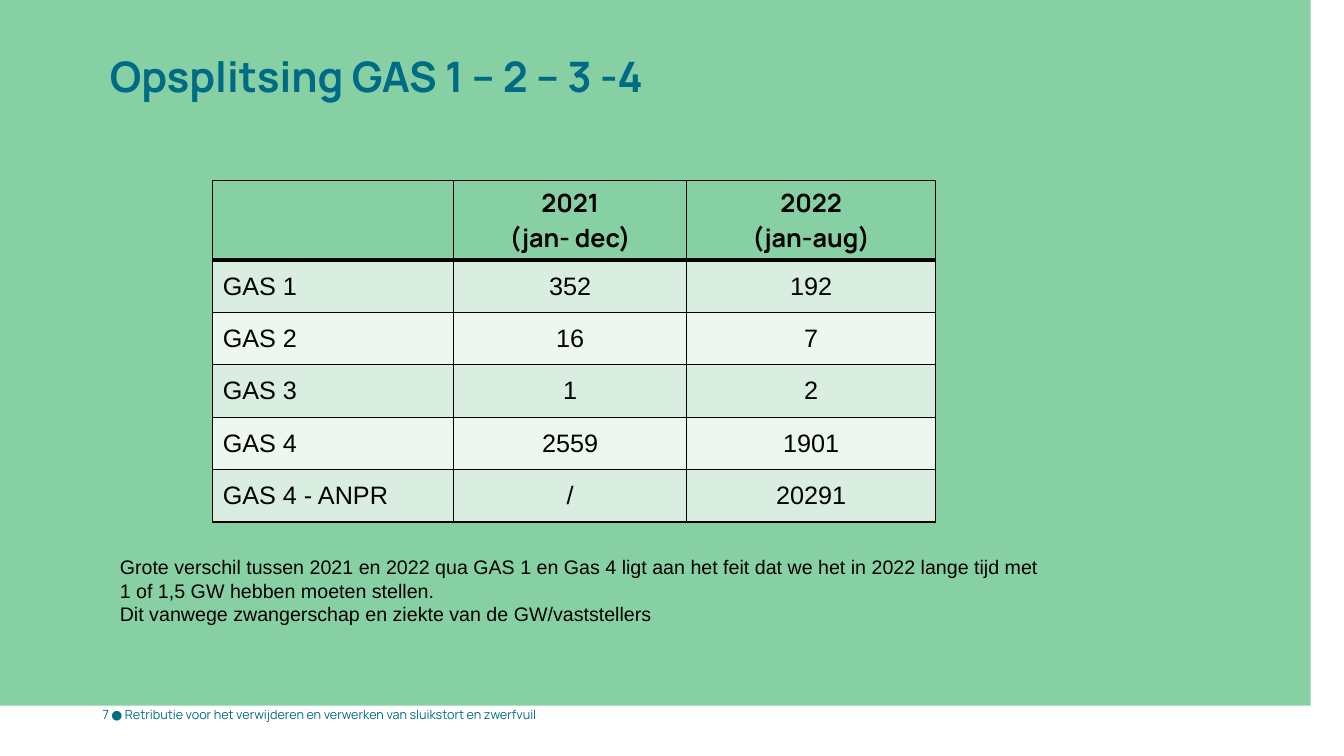
from math import cos, pi, sin

from lxml import etree
from pptx import Presentation
from pptx.dml.color import RGBColor
from pptx.enum.text import MSO_ANCHOR, PP_ALIGN
from pptx.oxml.ns import qn
from pptx.util import Inches, Pt

TOP, MIDDLE = MSO_ANCHOR.TOP, MSO_ANCHOR.MIDDLE
LEFT, CENTER = PP_ALIGN.LEFT, PP_ALIGN.CENTER
GREEN, TEAL, BLACK = "87D0A4", "006B84", "000000"
BANDS = ("D9EEE0", "EDF7F0")
HEADING, BODY = "Manrope", "Arial"

ROWS = [
    ("", "2021\n(jan- dec)", "2022\n(jan-aug)"),
    ("GAS 1", "352", "192"),
    ("GAS 2", "16", "7"),
    ("GAS 3", "1", "2"),
    ("GAS 4", "2559", "1901"),
    ("GAS 4 - ANPR", "/", "20291"),
]
NOTE = ("Grote verschil tussen 2021 en 2022 qua GAS 1 en Gas 4 ligt aan het feit "
        "dat we het in 2022 lange tijd met 1 of 1,5 GW hebben moeten stellen.\n"
        "Dit vanwege zwangerschap en ziekte van de GW/vaststellers")


def rgb(value):
    """Turn a hex string into a colour."""
    return RGBColor.from_string(value)


class SlideBuilder:
    """Holds the current slide and its text style."""

    def __init__(self, prs):
        """Add a title-only slide."""
        self.s = prs.slides.add_slide(prs.slide_layouts[5])

    def fill_text(self, tf, text, size, color=BLACK, name=BODY, bold=False,
                  align=LEFT, spacing=1.0):
        """Fill a text frame, one paragraph per line."""
        style = {"size": Pt(size), "name": name, "bold": bold}
        for i, line in enumerate(text.split("\n")):
            p = tf.paragraphs[0] if i == 0 else tf.add_paragraph()
            p.alignment, p.line_spacing = align, spacing
            r = p.add_run()
            r.text = line
            for key, value in style.items():
                setattr(r.font, key, value)
            r.font.color.rgb = rgb(color)

    def panel(self, left, right, bottom, notch, radius):
        """Draw the green panel behind everything else."""
        def arc(cy, start):
            angles = [start + i * pi / 120 for i in range(61)]
            return [(right - radius + radius * cos(a), cy + radius * sin(a)) for a in angles]

        points = arc(radius, -pi / 2) + arc(bottom - radius, 0)
        points += [(left, bottom), (left, notch), (0, notch)]
        fb = self.s.shapes.build_freeform(0, 0, scale=Inches(1))
        fb.add_line_segments(points)
        sp = fb.convert_to_shape()
        sp.shadow.inherit = False
        sp.fill.solid()
        sp.fill.fore_color.rgb = rgb(GREEN)
        sp.line.fill.background()
        self.s.shapes._spTree.insert(2, sp._element)

    def title(self, text, *box):
        """Place and format the title."""
        sp = self.s.shapes.title
        sp.left, sp.top, sp.width, sp.height = map(Inches, box)
        tf = sp.text_frame
        for side in ("left", "top", "right", "bottom"):
            setattr(tf, f"margin_{side}", 0)
        tf.vertical_anchor = TOP
        self.fill_text(tf, text, 30, TEAL, HEADING, True, spacing=0.9)

    def text(self, text, *box, anchor=TOP, **style):
        """Add a wrapped text box."""
        tf = self.s.shapes.add_textbox(*map(Inches, box)).text_frame
        tf.word_wrap, tf.vertical_anchor = True, anchor
        self.fill_text(tf, text, **style)

    def borders(self, cell, top, bottom):
        """Give a cell black borders."""
        tc_pr = cell._tc.get_or_add_tcPr()
        for i, (side, width) in enumerate(zip("LRTB", (1, 1, top, bottom))):
            ln = etree.Element(qn(f"a:ln{side}"), w=str(int(Pt(width))))
            fill = etree.SubElement(ln, qn("a:solidFill"))
            etree.SubElement(fill, qn("a:srgbClr"), val=BLACK)
            tc_pr.insert(i, ln)

    def table(self, rows, left, top, widths, heights):
        """Add a table with a header row and banded body."""
        box = map(Inches, (left, top, sum(widths), sum(heights)))
        tbl = self.s.shapes.add_table(len(rows), len(widths), *box).table
        for col, width in zip(tbl.columns, widths):
            col.width = Inches(width)
        for i, row in enumerate(rows):
            tbl.rows[i].height = Inches(heights[i])
            header = i == 0
            for j, text in enumerate(row):
                cell = tbl.cell(i, j)
                cell.vertical_anchor = MIDDLE
                cell.fill.solid()
                cell.fill.fore_color.rgb = rgb(GREEN if header else BANDS[(i - 1) % 2])
                self.borders(cell, 3 if i == 1 else 1, 3 if header else 1)
                self.fill_text(cell.text_frame, text, 18, name=HEADING if header else BODY,
                               bold=header, align=CENTER if j else LEFT)


def main():
    """Build the slide and save it."""
    prs = Presentation()
    prs.slide_width, prs.slide_height = Inches(13.33), Inches(7.5)
    b = SlideBuilder(prs)
    b.panel(left=0.31, right=13.03, bottom=6.69, notch=3.33, radius=0.87)
    b.title("Opsplitsing GAS 1 – 2 – 3 -4", 1.09, 0.56, 10.29, 0.87)
    b.table(ROWS, 2.11, 1.79, (2.39, 2.31, 2.47), [0.79] + [0.52] * 5)
    b.text(NOTE, 1.09, 5.46, 9.45, 0.81, size=14)
    b.text("7 ● Retributie voor het verwijderen en verwerken van sluikstort en zwerfvuil",
           0.92, 6.89, 5.26, 0.4, anchor=MIDDLE, size=9, color=TEAL, name=HEADING)
    prs.save("out.pptx")


if __name__ == "__main__":
    main()
